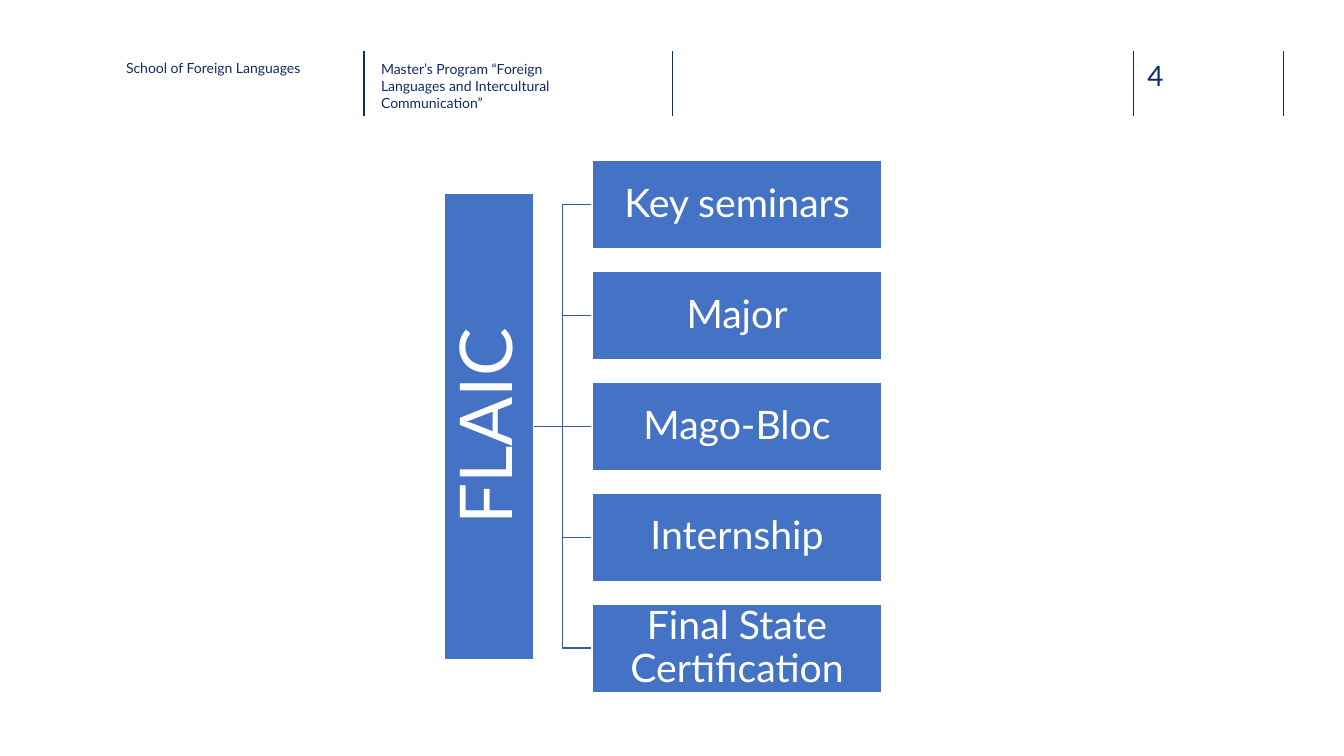
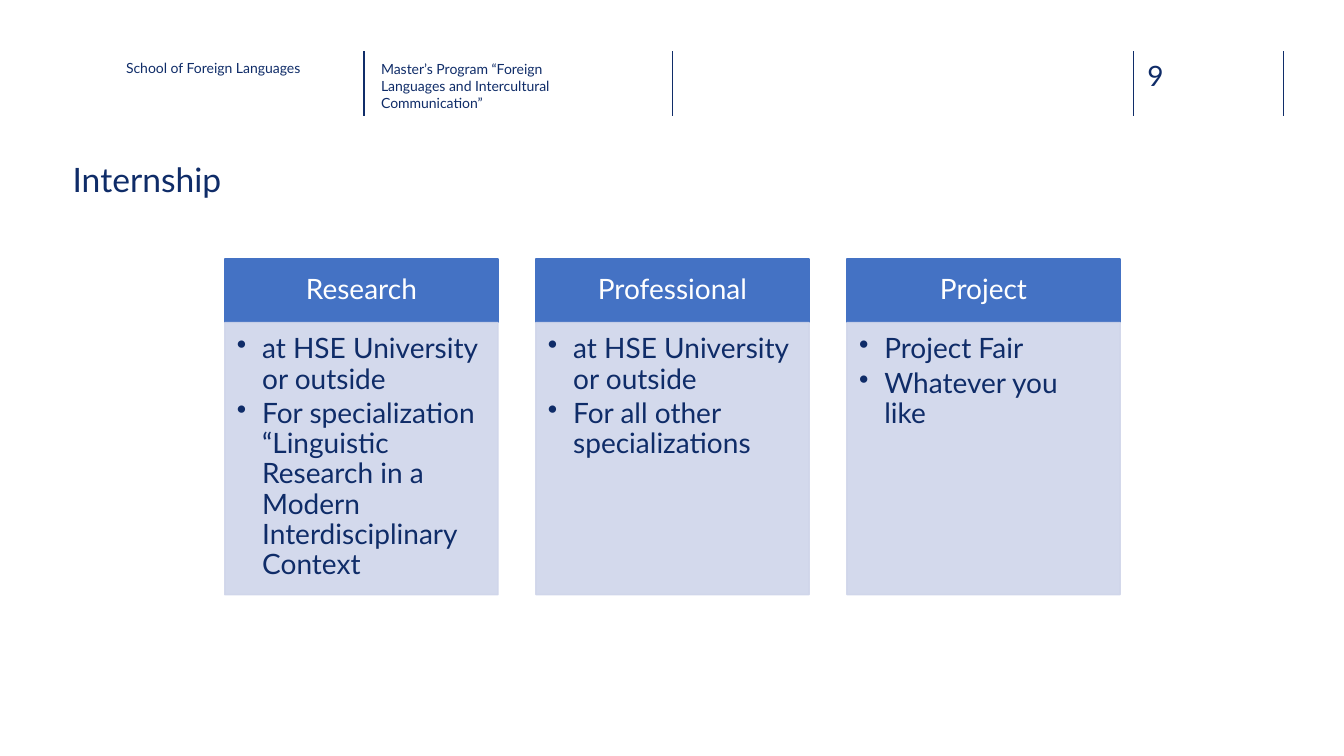
from dataclasses import dataclass

from pptx import Presentation
from pptx.dml.color import RGBColor
from pptx.enum.shapes import MSO_CONNECTOR as CONN, MSO_SHAPE
from pptx.enum.text import MSO_ANCHOR as ANCHOR, PP_ALIGN as ALIGN
from pptx.oxml.ns import qn
from pptx.util import Inches, Pt
from lxml.etree import SubElement


@dataclass(frozen=True)
class Theme:
    font: str = "Lato"
    navy: str = "0F2C68"
    rule: str = "102D69"
    blue: str = "4472C4"
    link: str = "365B9D"
    pale: str = "CFD5EA"
    white: str = "FFFFFF"
    header: int = 10
    body: int = 20
    title: int = 24
    branch: int = 28
    root: int = 52


T = Theme()
SLIDE_SIZE = (13.33, 7.5)
TITLE_ONLY, BLANK = 5, 6

# Header: text boxes as (text, box), rules by x position
HEADER_TEXTS = [
    ("School of Foreign Languages", (1.25, 0.59, 2.08, 0.45)),
    ("Master’s Program “Foreign Languages and Intercultural Communication”",
     (3.78, 0.6, 2.26, 0.45)),
]
HEADER_RULES = [3.61, 6.67, 11.24, 12.73]
RULE_TOP, RULE_BOTTOM = 0.51, 1.15
NUMBER_BOX = (11.38, 0.58, 0.73, 0.34)

ROOT = "FLAIC"
BRANCHES = ["Key seminars", "Major", "Mago-Bloc", "Internship",
            "Final State Certification"]

INTERNSHIP = "Internship"
COLUMNS = [
    ("Research", ["at HSE University or outside",
                  "For specialization “Linguistic Research in a Modern "
                  "Interdisciplinary Context"]),
    ("Professional", ["at HSE University or outside",
                      "For all other specializations"]),
    ("Project", ["Project Fair", "Whatever you like"]),
]


def rgb(value):
    return RGBColor.from_string(value)


def fill_text(tf, lines, size, color, align=ALIGN.LEFT, anchor=ANCHOR.TOP,
              insets=(0, 0, 0, 0), spacing=1.0, after=0, bullets=False):
    tf.word_wrap = True
    tf.vertical_anchor = anchor
    (tf.margin_left, tf.margin_top,
     tf.margin_right, tf.margin_bottom) = map(Inches, insets)
    for i, line in enumerate(lines):
        p = tf.add_paragraph() if i else tf.paragraphs[0]
        p.text = line
        p.alignment, p.line_spacing = align, spacing
        p.space_before, p.space_after = Pt(0), Pt(after)
        if bullets:
            pPr = p._p.get_or_add_pPr()
            pPr.set("marL", str(Inches(0.25)))
            pPr.set("indent", str(-Inches(0.25)))
            SubElement(pPr, qn("a:buChar")).set("char", "•")
        for r in p.runs:
            r.font.name, r.font.size = T.font, Pt(size)
            r.font.color.rgb = rgb(color)


def add_text(slide, text, box, size):
    sp = slide.shapes.add_textbox(*map(Inches, box))
    fill_text(sp.text_frame, [text], size, T.navy)


def add_box(slide, box, fill, line):
    sp = slide.shapes.add_shape(MSO_SHAPE.RECTANGLE, *map(Inches, box))
    sp.shadow.inherit = False
    sp.fill.solid()
    sp.fill.fore_color.rgb = rgb(fill)
    sp.line.color.rgb = rgb(line)
    sp.line.width = Pt(1)
    return sp


def add_line(slide, start, end, color, kind=CONN.STRAIGHT):
    cx = slide.shapes.add_connector(kind, *map(Inches, start + end))
    cx.line.color.rgb = rgb(color)
    cx.line.width = Pt(1)
    SubElement(cx._element.spPr, qn("a:effectLst"))


def set_alpha(sp, percent):
    """Make the fill and the outline of a shape partly transparent."""
    for clr in sp._element.spPr.iter(qn("a:srgbClr")):
        SubElement(clr, qn("a:alpha")).set("val", str(percent * 1000))


def new_slide(prs, number, title=None):
    slide = prs.slides.add_slide(prs.slide_layouts[TITLE_ONLY if title else BLANK])
    for x in HEADER_RULES:
        add_line(slide, (x, RULE_TOP), (x, RULE_BOTTOM), T.rule)
    for text, box in HEADER_TEXTS:
        add_text(slide, text, box, T.header)
    add_text(slide, str(number), NUMBER_BOX, T.body)
    if title:
        sp = slide.shapes.title
        sp.left, sp.top, sp.width, sp.height = map(Inches, (0.72, 1.58, 5.12, 0.77))
        fill_text(sp.text_frame, [title], T.title, T.navy)
    return slide


def program_slide(prs):
    slide = new_slide(prs, 4)
    left, top, width, height, pitch = 5.87, 1.59, 2.88, 0.88, 1.1
    root_center, root_length = 4.85, 4.63
    root_right = root_center + height / 2
    middle = top + pitch * (len(BRANCHES) - 1) / 2 + height / 2
    centers = [top + pitch * i + height / 2 for i in range(len(BRANCHES))]

    for y in centers:
        kind = CONN.STRAIGHT if abs(y - middle) < 0.01 else CONN.ELBOW
        add_line(slide, (root_right, middle), (left, y), T.link, kind)

    root = add_box(slide, (root_center - root_length / 2, middle - height / 2,
                           root_length, height), T.blue, T.white)
    root.rotation = 270
    fill_text(root.text_frame, [ROOT], T.root, T.white, ALIGN.CENTER,
              ANCHOR.MIDDLE, (0.04,) * 4, 0.9)
    for text, y in zip(BRANCHES, centers):
        sp = add_box(slide, (left, y - height / 2, width, height), T.blue, T.white)
        fill_text(sp.text_frame, [text], T.branch, T.white, ALIGN.CENTER,
                  ANCHOR.MIDDLE, (0.02,) * 4, 0.9)


def internship_slide(prs):
    slide = new_slide(prs, 9, INTERNSHIP)
    left, top, width, pitch = 2.23, 2.57, 2.71, 3.085
    head_height, body_height = 0.63, 2.7
    for i, (heading, items) in enumerate(COLUMNS):
        x = left + pitch * i
        head = add_box(slide, (x, top, width, head_height), T.blue, T.blue)
        fill_text(head.text_frame, [heading], T.body, T.white, ALIGN.CENTER,
                  ANCHOR.MIDDLE, (0.16, 0.09, 0.16, 0.09), 0.9)
        body = add_box(slide, (x, top + head_height, width, body_height),
                       T.pale, T.pale)
        set_alpha(body, 90)
        fill_text(body.text_frame, items, T.body, T.navy,
                  insets=(0.12, 0.12, 0.16, 0.17), spacing=0.9, after=3,
                  bullets=True)


def main():
    prs = Presentation()
    prs.slide_width, prs.slide_height = map(Inches, SLIDE_SIZE)
    program_slide(prs)
    internship_slide(prs)
    prs.save("out.pptx")


if __name__ == "__main__":
    main()
